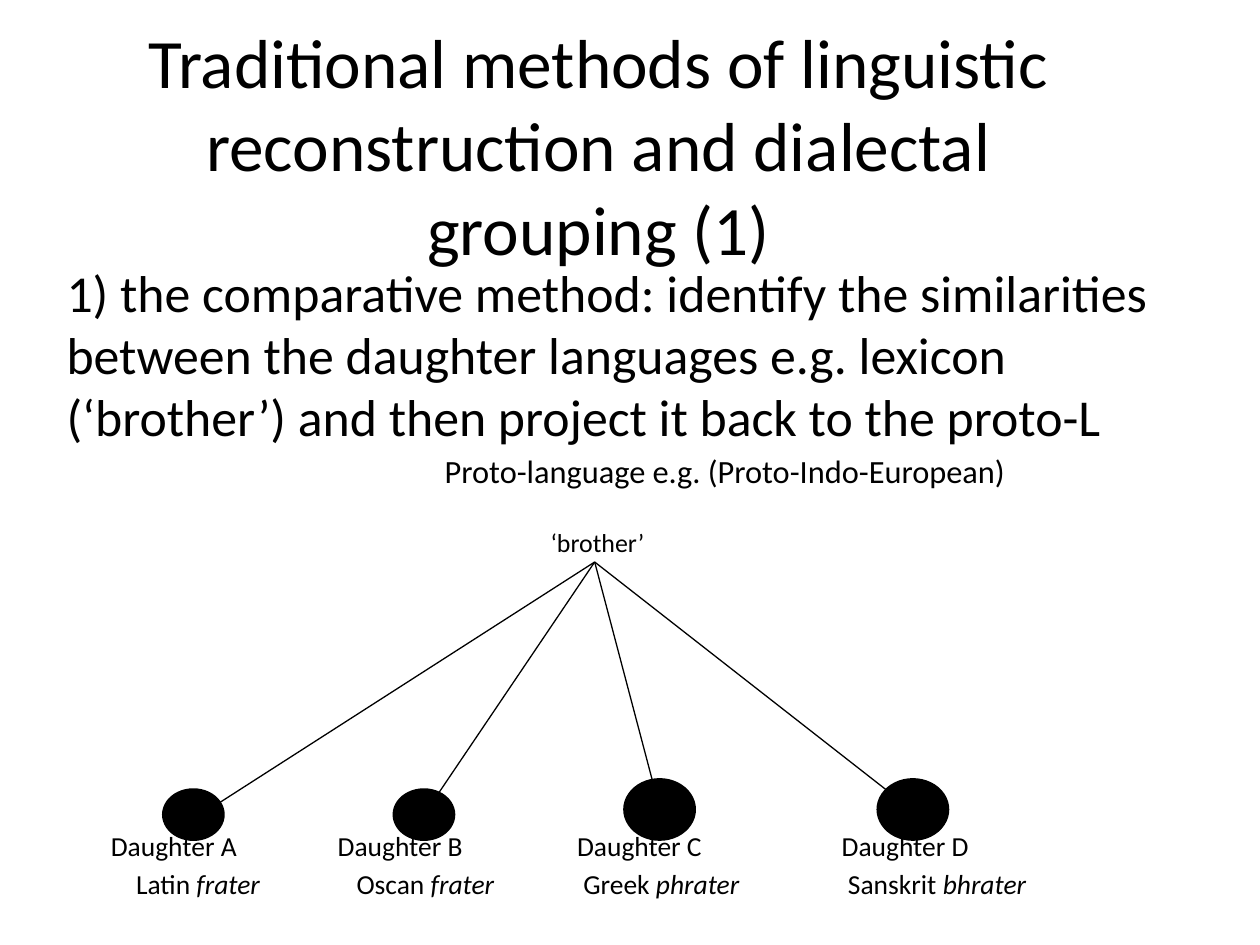
"""Build a slide on the comparative method with a tree of four daughter languages."""
import pptx
import pptx.util
import pptx.dml.color
import pptx.enum.shapes
import pptx.enum.text
import lxml.etree

Pt = pptx.util.Pt
ENUM = pptx.enum.text

THEME = {
    "font": "Calibri", "ink": "000000", "back": "FFFFFF",
    "title": 39.6, "body": 29.6, "proto": 18.5, "word": 14.8, "leaf": 15.7,
    "edge": 0.75, "rim": 2,
}
WIDE, HIGH = 10, 7.5

TITLE = "Traditional methods of linguistic reconstruction and dialectal grouping (1)"
BODY = ("1) the comparative method: identify the similarities between the daughter "
        "languages e.g. lexicon (‘brother’) and then project it back to the proto-L")
PROTO = "Proto-language e.g. (Proto-Indo-European)"
WORD = "‘brother’"

# Shares of the slide's width and height, in percent.
LEAVES = [
    {"name": "Daughter A", "tongue": "Latin", "form": "frater",
     "left": 8.8, "shift": 2, "node": 13, "size": (4.7, 5.2), "end": 16.5},
    {"name": "Daughter B", "tongue": "Oscan", "form": "frater",
     "left": 26.8, "shift": 1.5, "node": 31.3, "size": (4.7, 5.2), "end": 33.9},
    {"name": "Daughter C", "tongue": "Greek", "form": "phrater",
     "left": 45.8, "shift": 0.5, "node": 49.6, "size": (5.5, 6.27), "end": 52.4},
    {"name": "Daughter D", "tongue": "Sanskrit", "form": "bhrater",
     "left": 66.8, "shift": 0.5, "node": 69.7, "size": (5.5, 6.27), "end": 72.4},
]
APEX = (47.2, 59.47)
ROWS = {"end": 85.73, "base": 88.8, "name": 87.73, "form": 91.73}
INSET = {"margin_left": 0.1, "margin_right": 0.1, "margin_top": 0.05, "margin_bottom": 0.05}


def place(x, y):
    return pptx.util.Inches(WIDE * x / 100), pptx.util.Inches(HIGH * y / 100)


def tint(name):
    return pptx.dml.color.RGBColor.from_string(THEME[name])


def apply(thing, form):
    for key, value in form.items():
        setattr(thing, key, value)


def write(slide, runs, size, at, span, inset=False, **form):
    box = slide.shapes.add_textbox(*place(*at), *place(*span))
    frame = box.text_frame
    pads = {key: pptx.util.Inches(pad if inset else 0) for key, pad in INSET.items()}
    apply(frame, {"word_wrap": inset, **pads, **form})
    para = frame.paragraphs[0]
    for text, slant in runs:
        run = para.add_run()
        run.text = text
        apply(run.font, {"name": THEME["font"], "size": Pt(THEME[size]), "italic": slant})
        run.font.color.rgb = tint("ink")
    return para


def edge(slide, end):
    line = slide.shapes.add_connector(
        pptx.enum.shapes.MSO_CONNECTOR.STRAIGHT, *place(*APEX), *place(end, ROWS["end"]))
    line.line.color.rgb = tint("ink")
    line.line.width = Pt(THEME["edge"])
    props = line._element.spPr
    lxml.etree.SubElement(props, pptx.oxml.ns.qn("a:effectLst"))


def node(slide, leaf):
    wide, high = leaf["size"]
    dot = slide.shapes.add_shape(
        pptx.enum.shapes.MSO_SHAPE.OVAL,
        *place(leaf["node"], ROWS["base"] - high), *place(wide, high))
    dot.shadow.inherit = False
    dot.fill.solid()
    dot.fill.fore_color.rgb = tint("ink")
    dot.line.color.rgb = tint("ink")
    dot.line.width = Pt(THEME["rim"])


def main():
    deck = pptx.Presentation()
    apply(deck, {"slide_width": pptx.util.Inches(WIDE), "slide_height": pptx.util.Inches(HIGH)})
    slide = deck.slides.add_slide(deck.slide_layouts[6])
    slide.background.fill.solid()
    slide.background.fill.fore_color.rgb = tint("back")

    head = write(slide, [(TITLE, False)], "title", (9.1, 6.93), (76.8, 16.67),
                 inset=True, vertical_anchor=ENUM.MSO_ANCHOR.MIDDLE)
    head.alignment = ENUM.PP_ALIGN.CENTER
    write(slide, [(BODY, False)], "body", (4.3, 26.93), (90, 21), inset=True)
    write(slide, [(PROTO, False)], "proto", (35.3, 47.73), (45, 4.2))
    write(slide, [(WORD, False)], "word", (43.7, 55.73), (8, 3.4))

    for leaf in LEAVES:
        write(slide, [(leaf["name"], False)], "leaf", (leaf["left"], ROWS["name"]), (11, 3.6))
        write(slide, [(leaf["tongue"] + " ", False), (leaf["form"], True)], "leaf",
              (leaf["left"] + leaf["shift"], ROWS["form"]), (15, 3.6))
    for leaf in LEAVES:
        node(slide, leaf)
    for leaf in LEAVES:
        edge(slide, leaf["end"])
    deck.save("out.pptx")


if __name__ == "__main__":
    main()
